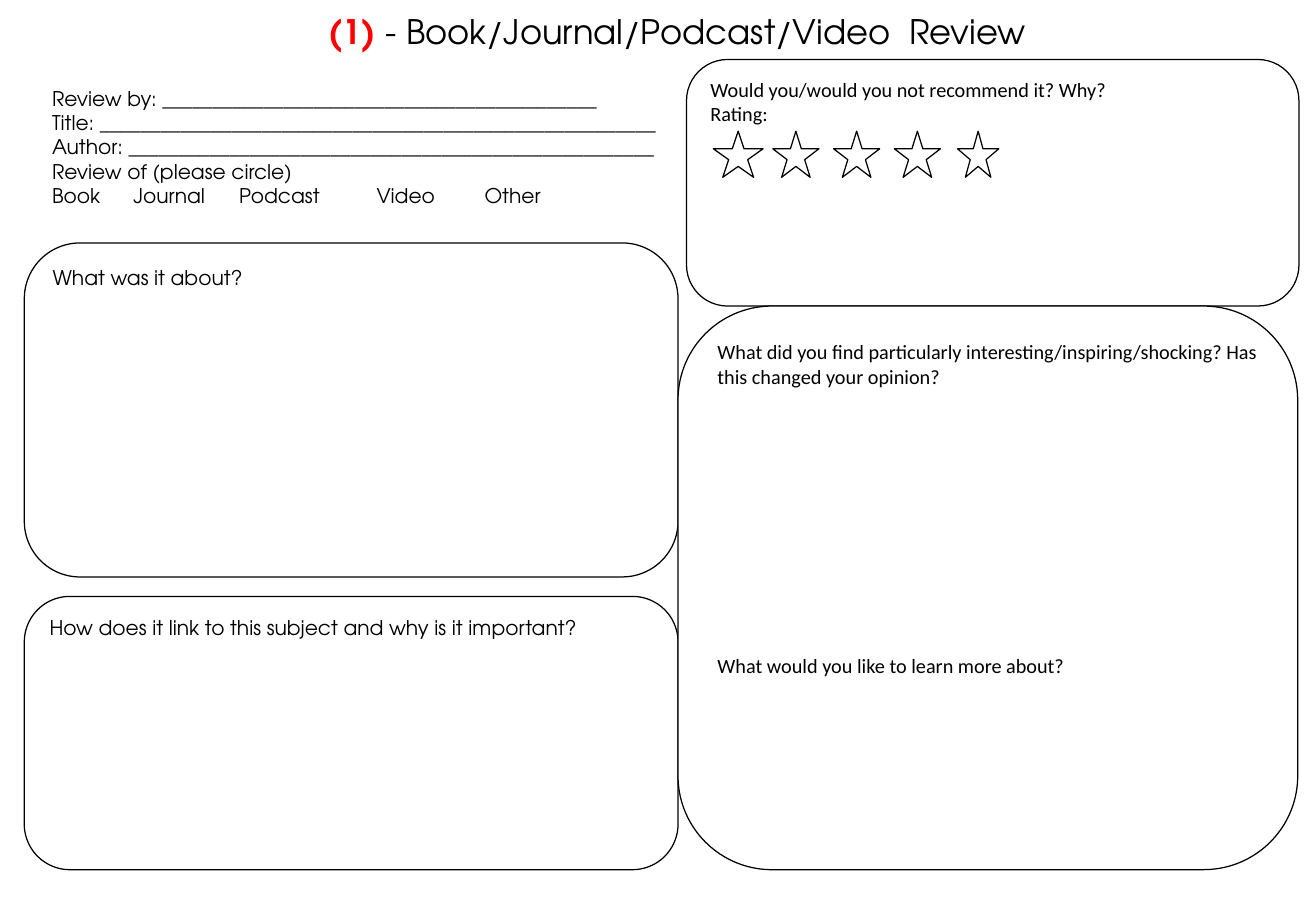
from lxml import etree
from pptx import Presentation
from pptx.dml.color import RGBColor
from pptx.enum.shapes import MSO_SHAPE
from pptx.enum.text import MSO_ANCHOR, MSO_AUTO_SIZE, PP_ALIGN
from pptx.oxml.ns import qn
from pptx.util import Inches, Pt

PANEL = MSO_SHAPE.FLOWCHART_ALTERNATE_PROCESS
STAR = MSO_SHAPE.STAR_5_POINT
TOP = MSO_ANCHOR.TOP
FIXED = MSO_AUTO_SIZE.NONE
LEFT, CENTER = PP_ALIGN.LEFT, PP_ALIGN.CENTER

COLORS = {"ink": "000000", "paper": "FFFFFF", "mark": "FF0000"}
GEO, SANS = "TeX Gyre Adventor", "Calibri"
FRAME = {"word_wrap": True, "auto_size": FIXED, "vertical_anchor": TOP}

PANELS = [
    ((5.65, 0.49, 5.04, 2.03), SANS,
     ["Would you/would you not recommend it? Why?", "Rating:"], 0),
    ((0.2, 4.91, 5.38, 2.25), GEO,
     ["How does it link to this subject and why is it important?"], 0),
    ((0.2, 2, 5.38, 2.75), GEO, ["What was it about?"], 0),
    ((5.58, 2.52, 5.1, 4.64), SANS,
     ["What did you find particularly interesting/inspiring/shocking? "
      "Has this changed your opinion?",
      "What would you like to learn more about?"], 157),
]
BLANKS = [("Review by", 43), ("Title", 55), ("Author", 52)]
KINDS = ["Book", "Journal", "Podcast", "Video", "Other"]
STOPS = [0.67, 1.54, 2.67, 3.56]
STARS = [(5.87, 0.41), (6.36, 0.38), (6.86, 0.38), (7.36, 0.38), (7.88, 0.34)]


def color(name):
    return RGBColor.from_string(COLORS[name])


def style(item, values):
    for key, value in values.items():
        setattr(item, key, value)


def write(para, text, face, size=12, ink="ink", bold=False):
    run = para.add_run()
    run.text = text
    style(run.font, {"name": face, "size": Pt(size), "bold": bold})
    run.font.color.rgb = color(ink)


def fill_lines(frame, lines, face, gap=0):
    """Write one paragraph per line, with gap points between them."""
    style(frame, FRAME)
    for i, line in enumerate(lines):
        para = frame.add_paragraph() if i else frame.paragraphs[0]
        style(para, {"alignment": LEFT, "space_before": Pt(gap if i else 0)})
        write(para, line, face)


def add_outline(slide, kind, place):
    shape = slide.shapes.add_shape(kind, *map(Inches, place))
    shape.shadow.inherit = False
    shape.fill.solid()
    shape.fill.fore_color.rgb = color("paper")
    shape.line.color.rgb = color("ink")
    shape.line.width = Pt(0.75)
    return shape


def set_tabs(para, stops):
    tabs = etree.SubElement(para._p.get_or_add_pPr(), qn("a:tabLst"))
    for stop in stops:
        etree.SubElement(tabs, qn("a:tab"), pos=str(Inches(stop)), algn="l")


def add_title(slide):
    title = slide.shapes.title
    place = map(Inches, (2.5, 0.04, 6.15, 0.4))
    style(title, dict(zip(("left", "top", "width", "height"), place)))
    style(title.text_frame, FRAME)
    para = title.text_frame.paragraphs[0]
    para.alignment = CENTER
    write(para, "(1) ", GEO, 20, "mark", True)
    write(para, "- Book/Journal/Podcast/Video  Review", GEO, 20)


def add_form(slide):
    box = slide.shapes.add_textbox(*map(Inches, (0.33, 0.66, 5.25, 1.03)))
    lines = [f"{name}: {'_' * count}" for name, count in BLANKS]
    lines += ["Review of (please circle)", "\t".join(KINDS)]
    fill_lines(box.text_frame, lines, GEO)
    set_tabs(box.text_frame.paragraphs[-1], STOPS)


def main():
    deck = Presentation()
    style(deck, {"slide_width": Inches(10.83), "slide_height": Inches(7.5)})
    slide = deck.slides.add_slide(deck.slide_layouts[5])
    add_title(slide)
    for place, face, lines, gap in PANELS:
        panel = add_outline(slide, PANEL, place)
        fill_lines(panel.text_frame, lines, face, gap)
    add_form(slide)
    for left, width in STARS:
        add_outline(slide, STAR, (left, 1.08, width, 0.38))
    deck.save("out.pptx")


if __name__ == "__main__":
    main()
